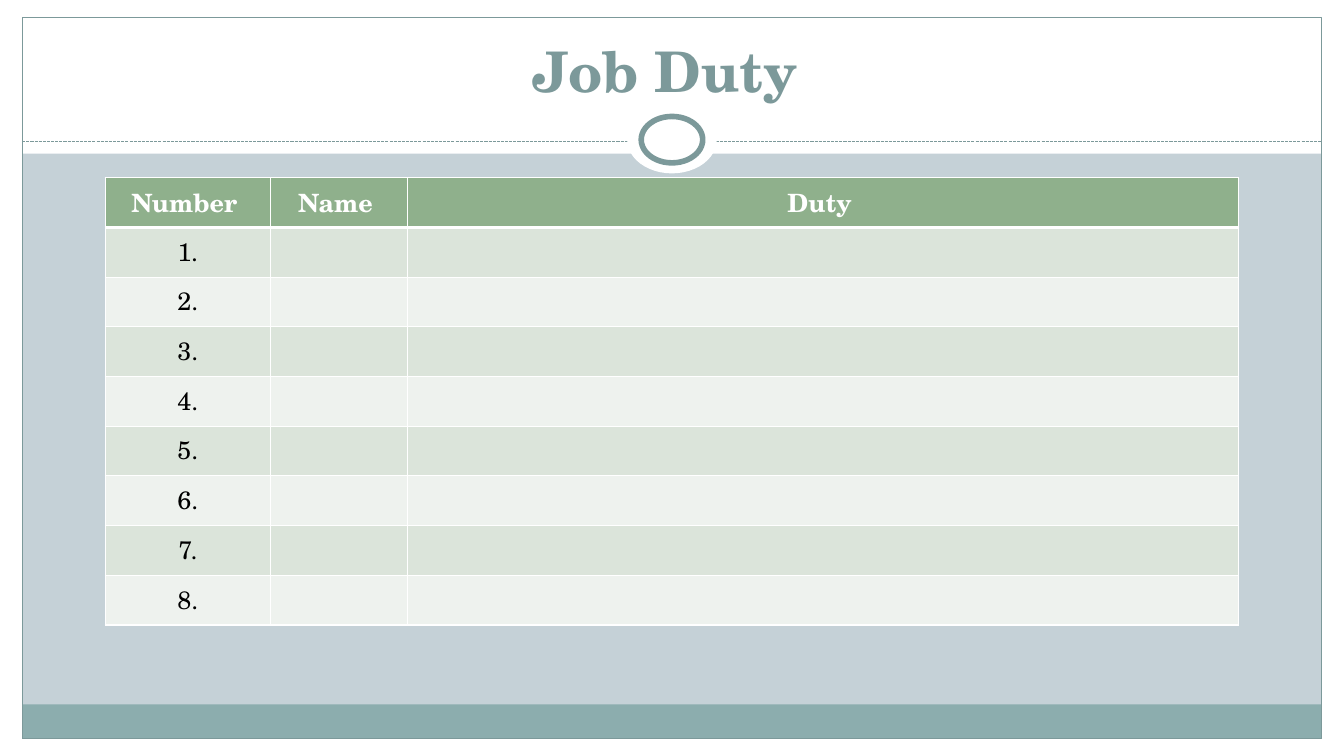
from lxml.etree import SubElement
from pptx import Presentation
from pptx.dml.color import RGBColor
from pptx.enum.dml import MSO_LINE
from pptx.enum.shapes import MSO_CONNECTOR, MSO_SHAPE
from pptx.enum.text import MSO_ANCHOR, MSO_AUTO_SIZE, PP_ALIGN
from pptx.oxml.ns import qn
from pptx.util import Cm, Pt

WHITE = RGBColor(0xFF, 0xFF, 0xFF)
BLACK = RGBColor(0x00, 0x00, 0x00)
MIST = RGBColor(0xC5, 0xD1, 0xD7)
TEAL = RGBColor(0x7C, 0x99, 0x9A)
FOOTER_TEAL = RGBColor(0x8C, 0xAD, 0xAE)
HEADER_GREEN = RGBColor(0x8F, 0xB0, 0x8C)
BANDS = (RGBColor(0xDB, 0xE4, 0xDA), RGBColor(0xEE, 0xF2, 0xEE))
FONT = "TeX Gyre Schola"

WIDTH, HEIGHT = Cm(33.87), Cm(19.05)
SIDE, EDGE = Cm(0.56), Cm(0.43)
HEADINGS = ("Number ", "Name ", "Duty ")
COLUMN_WIDTHS = (Cm(4.17), Cm(3.45), Cm(20.95))
DUTY_COUNT = 8


def add_panel(slide, box, fill=None, line=None, weight=0.75, preset=MSO_SHAPE.RECTANGLE):
    """Draw a flat preset shape in the box (left, top, width, height)."""
    panel = slide.shapes.add_shape(preset, *box)
    panel.shadow.inherit = False
    if fill is None:
        panel.fill.background()
    else:
        panel.fill.solid()
        panel.fill.fore_color.rgb = fill
    if line is None:
        panel.line.fill.background()
    else:
        panel.line.color.rgb = line
        panel.line.width = Pt(weight)


def add_frame(slide, left, top, width, height):
    """Draw the white margins, footer band and thin outline of the slide."""
    right, bottom = left + width, top + height
    inner_width = width - 2 * SIDE
    footer_height = Cm(0.87)
    for margin in (
        (left, bottom - EDGE, width, EDGE),
        (left, top, width, Cm(3.87)),
        (left, top, SIDE, height),
        (right - SIDE, top, SIDE, height),
    ):
        add_panel(slide, margin, WHITE)
    footer_top = bottom - EDGE - footer_height
    add_panel(slide, (left + SIDE, footer_top, inner_width, footer_height), FOOTER_TEAL)
    add_panel(slide, (left + SIDE, top + EDGE, inner_width, height - 2 * EDGE), line=TEAL)


def add_divider(slide, left, top, width):
    """Draw the dashed rule with the ring at its middle."""
    rule = slide.shapes.add_connector(MSO_CONNECTOR.STRAIGHT, left, top, left + width, top)
    rule.line.color.rgb = TEAL
    rule.line.width = Pt(0.75)
    rule.line.dash_style = MSO_LINE.SQUARE_DOT
    SubElement(rule._element.spPr, qn("a:effectLst"))
    center, middle = left + width // 2, top - Cm(0.04)
    for ring_width, ring_height, line in ((Cm(2.26), Cm(1.7), None), (Cm(1.55), Cm(1.17), TEAL)):
        box = (center - ring_width // 2, middle - ring_height // 2, ring_width, ring_height)
        add_panel(slide, box, WHITE, line, 4, MSO_SHAPE.OVAL)


def add_run(paragraph, text, size, color, bold):
    """Add a run of centred text in the slide font."""
    paragraph.alignment = PP_ALIGN.CENTER
    run = paragraph.add_run()
    run.text = text
    run.font.name = FONT
    run.font.size = Pt(size)
    run.font.bold = bold
    run.font.color.rgb = color


def add_title(slide, left, top, width, height):
    """Place the title placeholder above the frame."""
    title = slide.shapes.title
    title.left, title.top, title.width, title.height = left, top, width, height
    title.element.getparent().append(title.element)
    frame = title.text_frame
    frame.word_wrap = True
    frame.auto_size = MSO_AUTO_SIZE.NONE
    frame.vertical_anchor = MSO_ANCHOR.BOTTOM
    add_run(frame.paragraphs[0], "Job Duty", 40, TEAL, True)
    add_run(frame.paragraphs[0], " ", 33, TEAL, False)


def add_borders(cell, top_weight, bottom_weight):
    """Draw white borders round a cell."""
    properties = cell._tc.get_or_add_tcPr()
    for side, weight in (("L", 1), ("R", 1), ("T", top_weight), ("B", bottom_weight)):
        border = SubElement(properties, qn(f"a:ln{side}"), w=str(Pt(weight)))
        SubElement(SubElement(border, qn("a:solidFill")), qn("a:srgbClr"), val=str(WHITE))


def add_duty_table(slide, left, top, width, height):
    """Draw the banded table of numbered duties."""
    rows = [HEADINGS] + [(f"{number}.", "", "") for number in range(1, DUTY_COUNT + 1)]
    table = slide.shapes.add_table(len(rows), len(HEADINGS), left, top, width, height).table
    for column, column_width in zip(table.columns, COLUMN_WIDTHS):
        column.width = column_width
    for row_index, row in enumerate(rows):
        is_header = row_index == 0
        for column_index, text in enumerate(row):
            cell = table.cell(row_index, column_index)
            add_borders(cell, 3 if row_index == 1 else 1, 3 if is_header else 1)
            cell.fill.solid()
            cell.fill.fore_color.rgb = HEADER_GREEN if is_header else BANDS[(row_index - 1) % 2]
            cell.margin_left = cell.margin_right = Cm(0.33)
            cell.margin_top = cell.margin_bottom = Cm(0.13)
            if text:
                color = WHITE if is_header else BLACK
                add_run(cell.text_frame.paragraphs[0], text, 18, color, is_header)


def main():
    """Build the job duty slide."""
    deck = Presentation()
    deck.slide_width, deck.slide_height = WIDTH, HEIGHT
    slide = deck.slides.add_slide(deck.slide_layouts[5])
    slide.background.fill.solid()
    slide.background.fill.fore_color.rgb = MIST
    add_frame(slide, 0, 0, WIDTH, HEIGHT)
    add_divider(slide, SIDE, Cm(3.56), WIDTH - 2 * SIDE)
    add_title(slide, Cm(1.12), Cm(0.64), Cm(31.6), Cm(2.11))
    add_duty_table(slide, Cm(2.65), Cm(4.48), sum(COLUMN_WIDTHS), Cm(11.27))
    deck.save("out.pptx")


if __name__ == "__main__":
    main()
